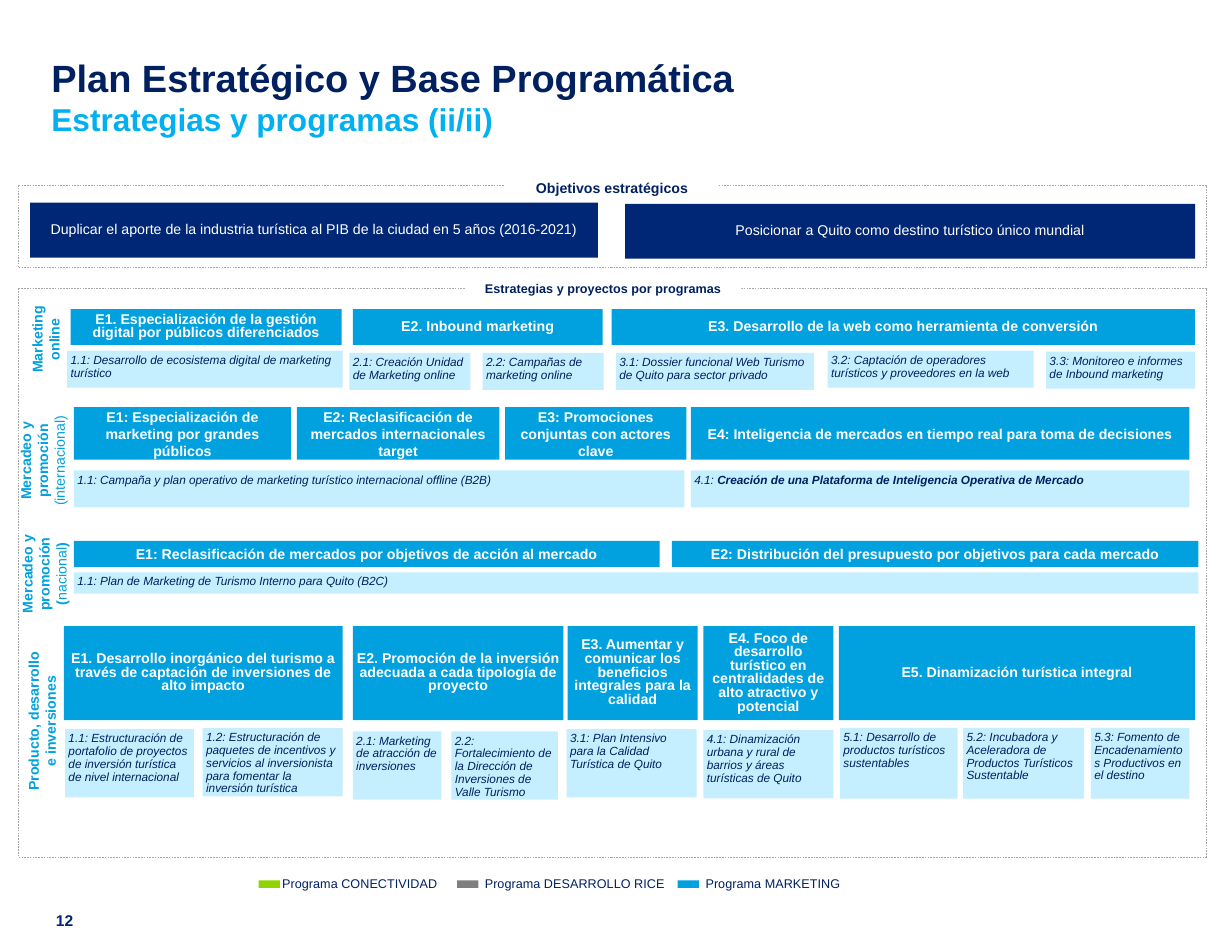
from pptx import Presentation
from pptx.dml.color import RGBColor
from pptx.enum.dml import MSO_LINE
from pptx.enum.shapes import MSO_SHAPE as SHAPE
from pptx.enum.text import MSO_ANCHOR as ANCHOR, PP_ALIGN as ALIGN
from pptx.util import Pt

COLORS = {
    "ink": "002060", "navy": "002776", "sky": "00B0F0", "blue": "00A1DE",
    "pale": "C5EFFF", "white": "FFFFFF", "border": "A6A6A6",
    "green": "92D400", "gray": "7F7F7F",
}

STRATEGIES = [
    (198.7, 23.1, 0.8, [
        (45.4, 174.2, "E1. Especialización de la gestión digital por públicos diferenciados"),
        (226.8, 160.6, "E2. Inbound marketing"),
        (393.1, 375.1, "E3. Desarrollo de la web como herramienta de conversión"),
    ]),
    (261.8, 33.8, 1, [
        (47.5, 139.7, "E1: Especialización de marketing por grandes públicos"),
        (190.8, 130.3, "E2: Reclasificación de mercados internacionales target"),
        (324.7, 116.6, "E3: Promociones conjuntas con actores clave"),
        (444.2, 320.4, "E4: Inteligencia de mercados en tiempo real para toma de decisiones"),
    ]),
    (347.8, 16.6, 1, [
        (47.5, 376.6, "E1: Reclasificación de mercados por objetivos de acción al mercado"),
        (432, 338.4, "E2: Distribución del presupuesto por objetivos para cada mercado"),
    ]),
    (402.5, 60.5, 0.8, [
        (41, 179.3, "E1. Desarrollo inorgánico del turismo a través de captación de inversiones de alto impacto"),
        (226.8, 135.4, "E2. Promoción de la inversión adecuada a cada tipología de proyecto"),
        (365, 83.5, "E3. Aumentar y comunicar los beneficios integrales para la calidad"),
        (452.2, 83.5, "E4. Foco de desarrollo turístico en centralidades de alto atractivo y potencial"),
        (539.3, 229, "E5. Dinamización turística integral"),
    ]),
]

PROJECTS = [
    (23.8, [
        (43.2, 225.4, 177.1, "1.1: Desarrollo de ecosistema digital de marketing turístico"),
        (224.6, 226.8, 77.8, "2.1: Creación Unidad de Marketing online"),
        (310.3, 226.8, 77.8, "2.2: Campañas de marketing online"),
        (396, 226.8, 127.4, "3.1: Dossier funcional Web Turismo de Quito para sector privado"),
        (532.1, 225.4, 132.5, "3.2: Captación de operadores turísticos y proveedores en la web"),
        (672.5, 226.1, 95.8, "3.3: Monitoreo e informes de Inbound marketing"),
        (47.5, 302.4, 392.4, "1.1: Campaña y plan operativo de marketing turístico internacional offline (B2B)"),
        (444.2, 302.4, 320.4, [
            ("4.1: ", False),
            ("Creación de una Plataforma de Inteligencia Operativa de Mercado", True)]),
    ]),
    (13.7, [(47.5, 367.9, 722.9, "1.1: Plan de Marketing de Turismo Interno para Quito (B2C)")]),
    (43.9, [
        (41.8, 468.7, 82.8, "1.1: Estructuración de portafolio de proyectos de inversión turística de nivel internacional"),
        (130.3, 468, 90, "1.2: Estructuración de paquetes de incentivos y servicios al inversionista para fomentar la inversión turística"),
        (226.8, 470.2, 56.9, "2.1: Marketing de atracción de inversiones"),
        (290.2, 470.2, 68.4, "2.2: Fortalecimiento de la Dirección de Inversiones de Valle Turismo"),
        (364.3, 468.7, 83.5, "3.1: Plan Intensivo para la Calidad Turística de Quito"),
        (452.2, 469.4, 83.5, "4.1: Dinamización urbana y rural de barrios y áreas turísticas de Quito"),
    ]),
    (45.4, [
        (540, 468, 75.6, "5.1: Desarrollo de productos turísticos sustentables"),
        (619.2, 468, 77.8, "5.2: Incubadora y Aceleradora de Productos Turísticos Sustentable"),
        (701.3, 468, 63.4, "5.3: Fomento de Encadenamientos Productivos en el destino"),
    ]),
]

PROGRAMS = [
    (-2.9, 204.5, 65.5, 27.4, "Marketing online"),
    (-7.9, 277.2, 71.3, 38.2, [("Mercadeo y promoción ", True), ("(internacional)", False)]),
    (-2.9, 349.9, 63.4, 38.2, [("Mercadeo y promoción (", True), ("nacional", False), (")", True)]),
    (-25.2, 450, 105.1, 27.4, "Producto, desarrollo e inversiones"),
]

LEGEND = [
    (166.3, 177.1, 120.2, "green", "Programa CONECTIVIDAD"),
    (293.8, 307.4, 196.6, "gray", "Programa DESARROLLO RICE"),
    (435.6, 449.3, 113.8, "blue", "Programa MARKETING"),
]


class Board:
    """Draws the elements of one slide in a shared style."""

    def __init__(self, slide, font="Arial"):
        self.s = slide
        self.font = font

    def color(self, name):
        return RGBColor.from_string(COLORS[name])

    def fill_text(self, p, text, size, color, bold=False, italic=False):
        runs = [(text, bold)] if isinstance(text, str) else text
        mixed = len(runs) > 1
        for part, heavy in runs:
            r = p.add_run()
            r.text = part
            if mixed:
                r.font.bold = heavy
        f = p.font
        f.name, f.size, f.italic = self.font, Pt(size), italic
        f.color.rgb = self.color(color)
        if not mixed:
            f.bold = bold

    def frame(self, sp, side, top, anchor=ANCHOR.TOP):
        tf = sp.text_frame
        tf.word_wrap = True
        tf.vertical_anchor = anchor
        tf.margin_left = tf.margin_right = Pt(side)
        tf.margin_top = tf.margin_bottom = Pt(top)
        return tf

    def rect(self, x, y, w, h, fill, dashed=False):
        sp = self.s.shapes.add_shape(SHAPE.RECTANGLE, Pt(x), Pt(y), Pt(w), Pt(h))
        sp.shadow.inherit = False
        sp.fill.solid()
        sp.fill.fore_color.rgb = self.color(fill)
        if dashed:
            sp.line.color.rgb = self.color("border")
            sp.line.width = Pt(0.25)
            sp.line.dash_style = MSO_LINE.DASH
        else:
            sp.line.fill.background()
        return sp

    def box(self, x, y, w, h, fill, text, size, color, side=2.2, spacing=1,
            align=ALIGN.CENTER, anchor=ANCHOR.MIDDLE, **style):
        p = self.frame(self.rect(x, y, w, h, fill), side, 2.2, anchor).paragraphs[0]
        p.alignment, p.line_spacing = align, spacing
        self.fill_text(p, text, size, color, **style)

    def label(self, x, y, w, h, text, size, color, rotation=0,
              align=ALIGN.LEFT, **style):
        sp = self.s.shapes.add_textbox(Pt(x), Pt(y), Pt(w), Pt(h))
        sp.rotation = rotation
        p = self.frame(sp, 4.3, 2.2).paragraphs[0]
        p.alignment = align
        self.fill_text(p, text, size, color, **style)

    def title(self, x, y, w, h, lines):
        tf = self.frame(self.s.shapes.add_textbox(Pt(x), Pt(y), Pt(w), Pt(h)), 0, 0)
        for i, (text, size, color) in enumerate(lines):
            p = tf.add_paragraph() if i else tf.paragraphs[0]
            self.fill_text(p, text, size, color, bold=True)
        return tf


def main():
    prs = Presentation()
    prs.slide_width, prs.slide_height = Pt(792), Pt(612)
    board = Board(prs.slides.add_slide(prs.slide_layouts[6]))

    board.title(33.1, 35.3, 737.3, 50.4, [
        ("Plan Estratégico y Base Programática", 24.4, "ink"),
        ("Estrategias y programas (ii/ii)", 20.3, "sky")])
    number = board.title(36, 585.4, 24.5, 13, [("12", 10, "navy")])
    number.paragraphs[0].line_spacing = Pt(12)

    for y, h in [(118.8, 53.3), (185, 365.8)]:
        board.rect(11.5, y, 763.9, h, "white", dashed=True)
    board.box(324.7, 113, 137.5, 15.8, "white", "Objetivos estratégicos", 9.1,
              "ink", side=4.3, bold=True)
    board.box(298.8, 178.6, 177.8, 13.7, "white",
              "Estrategias y proyectos por programas", 8.1, "ink", side=4.3, bold=True)

    for x, y, w, text in [
        (19.4, 130.3, 365, "Duplicar el aporte de la industria turística al PIB de la ciudad en 5 años (2016-2021)"),
        (401.8, 131, 366.5, "Posicionar a Quito como destino turístico único mundial"),
    ]:
        board.box(x, y, w, 35.3, "navy", text, 9.1, "white", side=4.3, spacing=0.9)

    for y, h, spacing, strategies in STRATEGIES:
        for x, w, text in strategies:
            board.box(x, y, w, h, "blue", text, 9.1, "white", spacing=spacing, bold=True)
    for h, projects in PROJECTS:
        for x, y, w, text in projects:
            board.box(x, y, w, h, "pale", text, 7.6, "ink", spacing=0.9,
                      align=ALIGN.LEFT, anchor=ANCHOR.TOP, italic=True)
    for x, y, w, h, text in PROGRAMS:
        board.label(x, y, w, h, text, 9.1, "blue", rotation=270,
                    align=ALIGN.CENTER, bold=True)
    for key_x, x, w, color, text in LEGEND:
        board.rect(key_x, 565.9, 13.7, 5, color)
        board.label(x, 560.9, w, 13.7, text, 8.1, "ink")

    prs.save("out.pptx")


if __name__ == "__main__":
    main()
